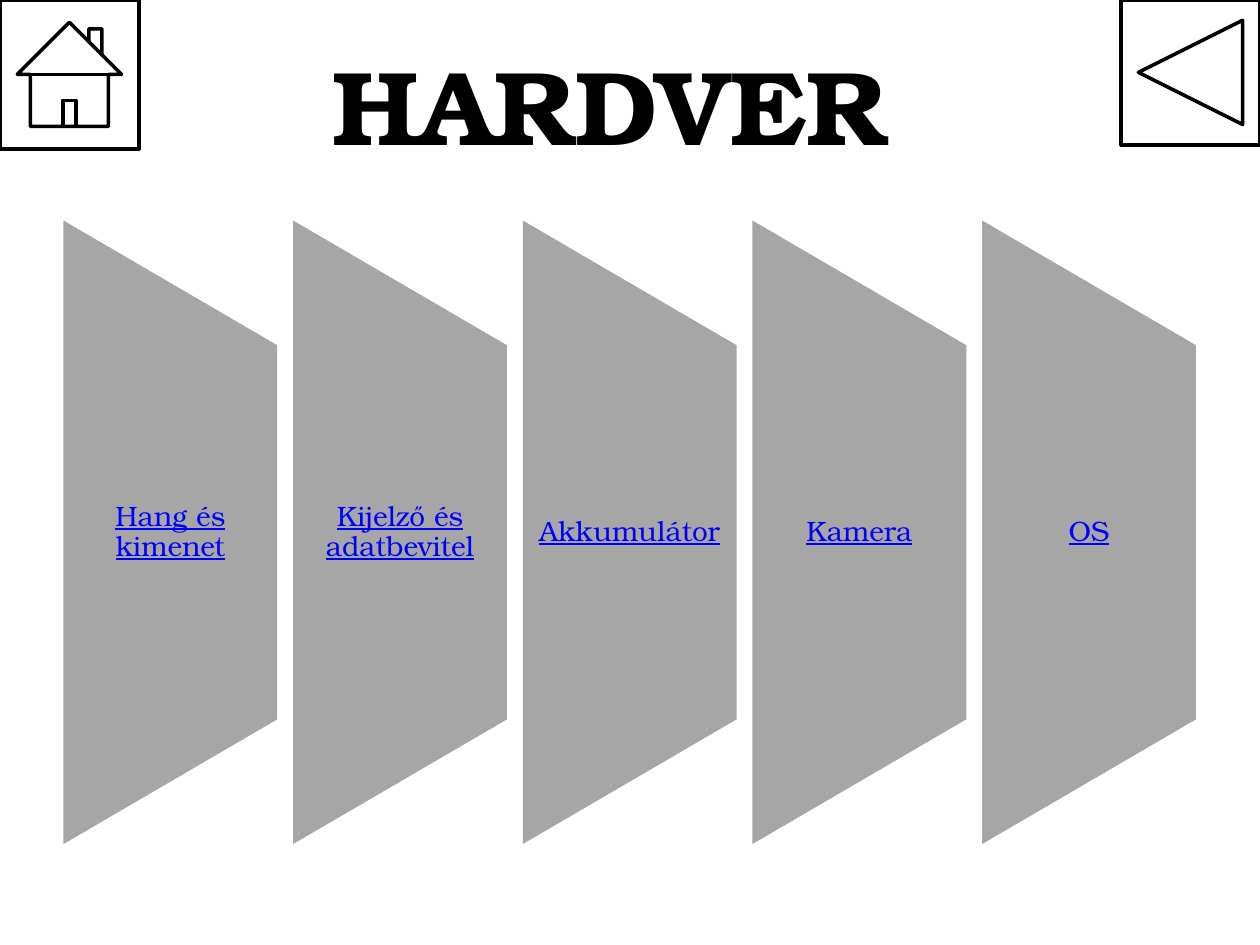
from pptx import Presentation
from pptx.dml.color import RGBColor
from pptx.enum.shapes import MSO_SHAPE
from pptx.enum.text import MSO_ANCHOR, PP_ALIGN
from pptx.util import Cm, Pt

TRAPEZOID = MSO_SHAPE.FLOWCHART_MANUAL_OPERATION
HOME = MSO_SHAPE.ACTION_BUTTON_HOME
BACK = MSO_SHAPE.ACTION_BUTTON_BACK_OR_PREVIOUS
MIDDLE = MSO_ANCHOR.MIDDLE
CENTER = PP_ALIGN.CENTER
FONT = "TeX Gyre Bonum"


def color(value):
    return RGBColor.from_string(value)


def add_text(text, left, top, width, height, size, ink, bold=False,
             underline=False, spacing=1.0, side=0.25, edge=0.13):
    box = slide.shapes.add_textbox(Cm(left), Cm(top), Cm(width), Cm(height))
    frame = box.text_frame
    frame.word_wrap = True
    frame.vertical_anchor = MIDDLE
    frame.margin_left = frame.margin_right = Cm(side)
    frame.margin_top = frame.margin_bottom = Cm(edge)
    para = frame.paragraphs[0]
    para.alignment = CENTER
    para.line_spacing = spacing
    span = para.add_run()
    span.text = text
    span.font.name = FONT
    span.font.size = Pt(size)
    span.font.bold = bold
    span.font.underline = underline
    span.font.color.rgb = color(ink)


deck = Presentation()
deck.slide_width = Cm(25.4)
deck.slide_height = Cm(19.05)
slide = deck.slides.add_slide(deck.slide_layouts[6])

add_text("HARDVER", 4.1, 0.5, 16.41, 3.18, size=60, ink="000000", bold=True)

topics = ["Hang és kimenet", "Kijelző és adatbevitel", "Akkumulátor", "Kamera", "OS"]
panel_width, panel_height = 4.31, 12.57
text_height = 7.54
first_left, pitch, center_y = 1.28, 4.63, 10.73

for index, topic in enumerate(topics):
    left = first_left + index * pitch
    panel = slide.shapes.add_shape(
        TRAPEZOID,
        Cm(left + (panel_width - panel_height) / 2), Cm(center_y - panel_width / 2),
        Cm(panel_height), Cm(panel_width))
    panel.rotation = 270
    panel.shadow.inherit = False
    panel.fill.solid()
    panel.fill.fore_color.rgb = color("A6A6A6")
    panel.line.fill.background()
    add_text(topic, left, center_y - text_height / 2, panel_width, text_height,
             size=16, ink="0000FF", underline=True, spacing=0.9, side=0.28, edge=0)

button_width = 2.8
for kind, left, height in [(HOME, 0, 3), (BACK, 25.4 - button_width, 2.92)]:
    button = slide.shapes.add_shape(kind, Cm(left), Cm(0), Cm(button_width), Cm(height))
    button.shadow.inherit = False
    button.fill.background()
    button.line.color.rgb = color("000000")
    button.line.width = Pt(2)

deck.save("out.pptx")
